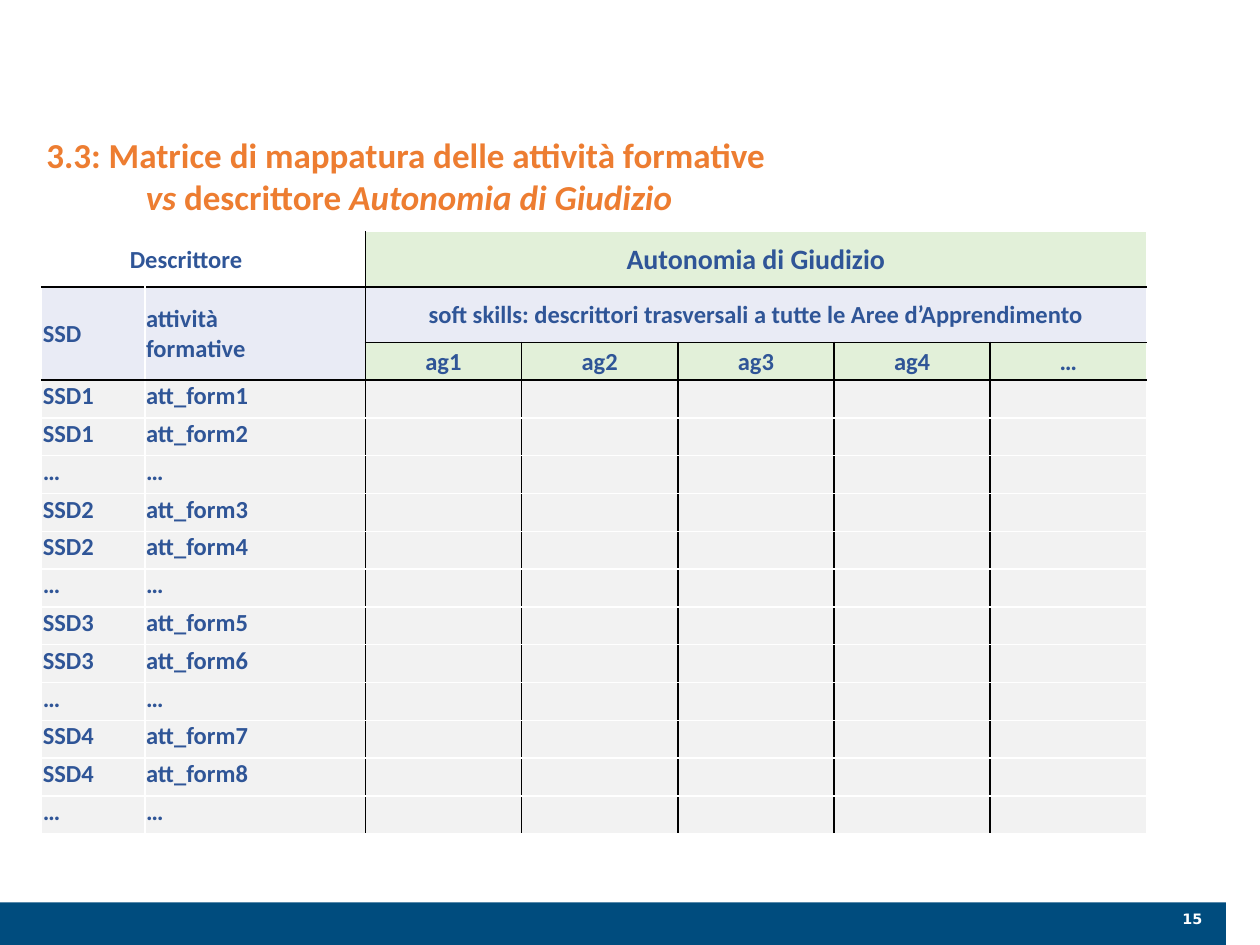
from pptx import Presentation
from pptx import util as u
from pptx.dml.color import RGBColor
from pptx.enum import shapes, text
from pptx.oxml import xmlchemy

WHITE = RGBColor(0xFF, 0xFF, 0xFF)
BLACK = RGBColor(0x00, 0x00, 0x00)
NAVY = RGBColor(0x00, 0x4C, 0x7E)
BLUE = RGBColor(0x2F, 0x55, 0x97)
ORANGE = RGBColor(0xED, 0x7D, 0x31)
GREEN = RGBColor(0xE2, 0xF0, 0xD9)
LILAC = RGBColor(0xE9, 0xEB, 0xF5)
GREY = RGBColor(0xF2, 0xF2, 0xF2)

WIDTH, HEIGHT = u.Inches(10), u.Inches(7.5)
COLUMN_WIDTHS = [0.82, 1.75] + [1.24] * 5
HEADER_ROWS = 3
ROW_HEIGHTS = [0.44] * 2 + [0.3] * 13
SKILLS = ["ag1", "ag2", "ag3", "ag4", "…"]
MERGES = [(0, 0, 0, 1), (0, 2, 0, 6), (1, 0, 2, 0), (1, 1, 2, 1), (1, 2, 1, 6)]


def box(left, top, width, height):
    return (round(WIDTH * left), round(HEIGHT * top),
            round(WIDTH * width), round(HEIGHT * height))


def style_run(run, size, color, name="Calibri", italic=None):
    font = run.font
    font.size, font.name, font.bold, font.italic = u.Pt(size), name, True, italic
    font.color.rgb = color


def set_indent(paragraph, margin, first_line=0):
    properties = paragraph._p.get_or_add_pPr()
    properties.set("marL", str(u.Inches(margin)))
    properties.set("indent", str(u.Inches(first_line)))


def add_text_box(slide, area):
    frame = slide.shapes.add_textbox(*area).text_frame
    frame.word_wrap = True
    return frame.paragraphs[0]


def add_footer(slide):
    band = slide.shapes.add_shape(shapes.MSO_SHAPE.RECTANGLE,
                                  *box(0, 0.955, 0.973, 0.045))
    band.shadow.inherit = False
    band.fill.solid()
    band.fill.fore_color.rgb = NAVY
    band.line.fill.background()
    paragraph = add_text_box(slide, box(0.853, 0.957, 0.111, 0.032))
    paragraph.text = "15"
    paragraph.alignment = text.PP_ALIGN.RIGHT
    style_run(paragraph.runs[0], 8.2, WHITE, "DejaVu Sans")


def add_title(slide):
    paragraph = add_text_box(slide, box(0.027, 0.135, 0.86, 0.103))
    set_indent(paragraph, 0.79, -0.79)
    paragraph.add_run().text = "3.3: Matrice di mappatura delle attività formative "
    paragraph.add_line_break()
    for words in ("vs ", "descrittore", " Autonomia di Giudizio"):
        paragraph.add_run().text = words
    for run, italic in zip(paragraph.runs, (False, True, False, True)):
        style_run(run, 20, ORANGE, italic=italic)


def body_labels():
    for group in range(1, 5):
        for number in (2 * group - 1, 2 * group):
            yield [f"SSD{group}", f"att_form{number}"]
        yield ["…", "…"]


def row_line(row):
    return BLACK if 1 <= row <= HEADER_ROWS else WHITE


def column_line(column):
    return BLACK if 2 <= column < len(COLUMN_WIDTHS) else WHITE


def add_border(cell, side, color):
    line = xmlchemy.OxmlElement(f"a:ln{side}")
    line.set("w", str(u.Pt(1)))
    fill = xmlchemy.OxmlElement("a:solidFill")
    value = xmlchemy.OxmlElement("a:srgbClr")
    value.set("val", str(color))
    fill.append(value)
    line.append(fill)
    cell._tc.get_or_add_tcPr().append(line)


def cell_fill(row, column):
    if row >= HEADER_ROWS:
        return GREY
    if row == 1 or column < 2:
        return LILAC if row else None
    return GREEN


def style_cell(cell, row, column):
    cell.margin_left = cell.margin_right = cell.margin_top = u.Inches(0.01)
    cell.margin_bottom = 0
    last_row = row + (cell.span_height if cell.is_merge_origin else 1)
    last_column = column + (cell.span_width if cell.is_merge_origin else 1)
    add_border(cell, "L", column_line(column))
    add_border(cell, "R", column_line(last_column))
    add_border(cell, "T", row_line(row))
    add_border(cell, "B", row_line(last_row))
    color = cell_fill(row, column)
    if color is None:
        cell.fill.background()
    else:
        cell.fill.solid()
        cell.fill.fore_color.rgb = color
    if row < HEADER_ROWS:
        cell.vertical_anchor = text.MSO_ANCHOR.MIDDLE


def write_cell(cell, label, row, column):
    cell.text = label
    paragraph = cell.text_frame.paragraphs[0]
    if column >= 2:
        paragraph.alignment = text.PP_ALIGN.CENTER
    for run in paragraph.runs:
        style_run(run, 16 if (row, column) == (0, 2) else 14, BLUE)
    if not label:
        ending = xmlchemy.OxmlElement("a:endParaRPr")
        ending.set("sz", "1400")
        paragraph._p.append(ending)


def add_matrix(slide):
    table = slide.shapes.add_table(
        len(ROW_HEIGHTS), len(COLUMN_WIDTHS),
        *box(0.033, 0.245, 0.877, 0.639)).table
    table.first_row = table.horz_banding = False
    for column, width in zip(table.columns, COLUMN_WIDTHS):
        column.width = u.Inches(width)
    for row, height in zip(table.rows, ROW_HEIGHTS):
        row.height = u.Inches(height)
    for top, left, bottom, right in MERGES:
        table.cell(top, left).merge(table.cell(bottom, right))
    labels = [
        ["Descrittore", "", "Autonomia di Giudizio"],
        ["SSD", "attività \vformative",
         "soft skills: descrittori trasversali a tutte le Aree d’Apprendimento"],
        ["", ""] + SKILLS,
        *body_labels(),
    ]
    for row, words in enumerate(labels):
        padded = words + [""] * (len(COLUMN_WIDTHS) - len(words))
        for column, label in enumerate(padded):
            cell = table.cell(row, column)
            if not cell.is_spanned:
                style_cell(cell, row, column)
                write_cell(cell, label, row, column)
    set_indent(table.cell(0, 0).text_frame.paragraphs[0], 0.69)


def main():
    presentation = Presentation()
    presentation.slide_width, presentation.slide_height = WIDTH, HEIGHT
    slide = presentation.slides.add_slide(presentation.slide_layouts[6])
    add_footer(slide)
    add_matrix(slide)
    add_title(slide)
    presentation.save("out.pptx")


if __name__ == "__main__":
    main()
